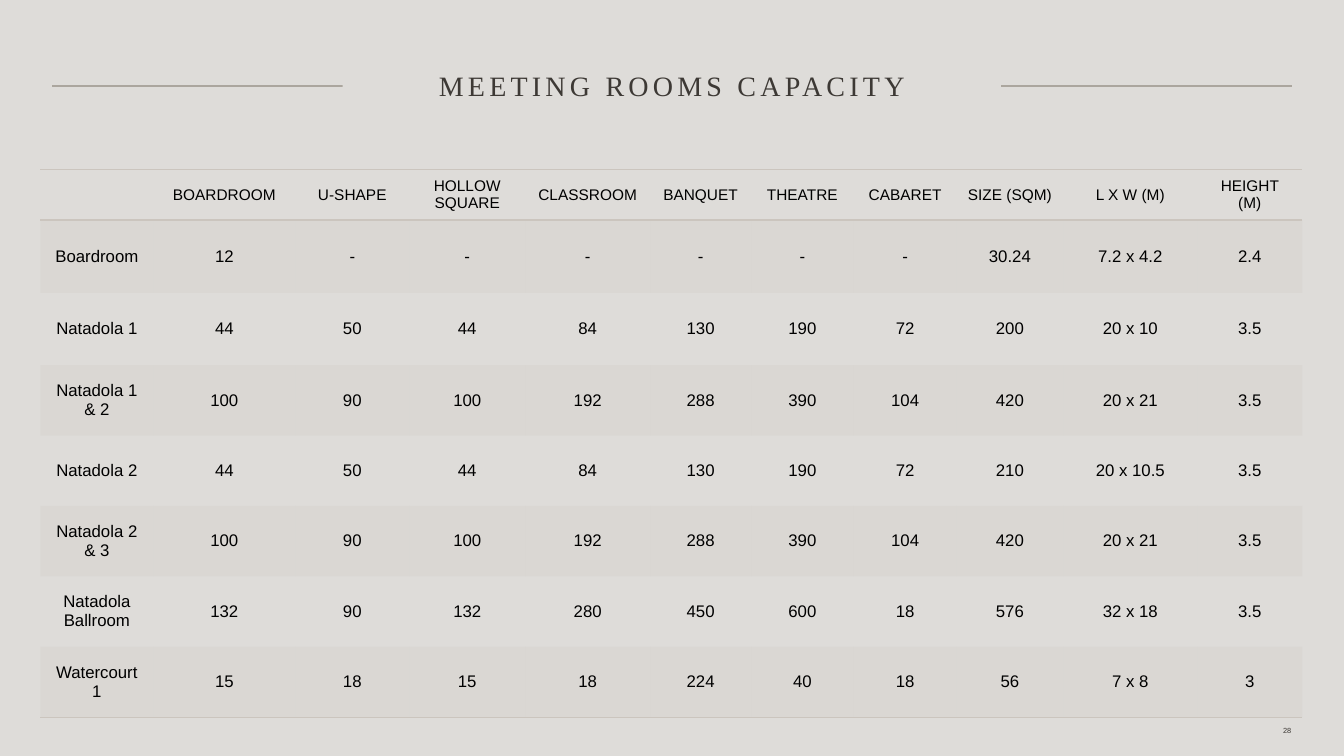
from lxml import etree
from pptx import Presentation
from pptx.dml.color import RGBColor
from pptx.enum import shapes, text
from pptx.oxml import ns
from pptx.util import Pt

BACKGROUND, INK, RULE, SAND = "DEDCD9", "3D3935", "ABA69E", "CBC5BE"
NO_STYLE = "{2D5ABB26-0587-4C30-8999-92F81FD0307C}"


def paint(target, color):
    """Give a fill or line fill one solid colour."""
    target.solid()
    target.fore_color.rgb = RGBColor.from_string(color)


def write(frame, content, size, color="000000", font="Arial",
          align=text.PP_ALIGN.CENTER, spacing=0):
    paragraph = frame.paragraphs[0]
    paragraph.alignment = align
    run = paragraph.add_run()
    run.text = content
    run.font.name, run.font.size = font, Pt(size)
    paint(run.font.fill, color)
    if spacing:
        run.font._element.set("spc", str(spacing * 100))


presentation = Presentation()
presentation.slide_width, presentation.slide_height = Pt(960), Pt(540)
slide = presentation.slides.add_slide(presentation.slide_layouts[6])
paint(slide.background.fill, BACKGROUND)

# Rule across the header, interrupted by the title box
rule = slide.shapes.add_connector(
    shapes.MSO_CONNECTOR.STRAIGHT, Pt(37.5), Pt(61.2), Pt(923), Pt(61.2))
paint(rule.line.fill, RULE)
rule.line.width = Pt(1.25)
etree.SubElement(rule._element.spPr, ns.qn("a:effectLst"))

# Title
title = slide.shapes.add_textbox(Pt(244.8), Pt(45.4), Pt(470.2), Pt(31.7))
paint(title.fill, BACKGROUND)
title.text_frame.word_wrap = False
title.text_frame.vertical_anchor = text.MSO_ANCHOR.MIDDLE
write(title.text_frame, "MEETING ROOMS CAPACITY", 20, INK,
      font="Times New Roman", spacing=3)

# Page number
number = slide.shapes.add_textbox(Pt(698.4), Pt(511.9), Pt(224), Pt(15.8))
frame = number.text_frame
frame.word_wrap = True
frame.margin_left = frame.margin_right = frame.margin_bottom = 0
frame.margin_top = Pt(7.2)
write(frame, "28", 5.3, INK, align=text.PP_ALIGN.RIGHT)

# Capacity table
rows = [
    ["", "BOARDROOM", "U-SHAPE", "HOLLOW SQUARE", "CLASSROOM", "BANQUET",
     "THEATRE", "CABARET", "SIZE (SQM)", "L X W (M)", "HEIGHT (M)"],
    ["Boardroom", "12", "-", "-", "-", "-", "-", "-", "30.24", "7.2 x 4.2", "2.4"],
    ["Natadola 1", "44", "50", "44", "84", "130", "190", "72", "200", "20 x 10", "3.5"],
    ["Natadola 1 & 2", "100", "90", "100", "192", "288", "390", "104", "420",
     "20 x 21", "3.5"],
    ["Natadola 2", "44", "50", "44", "84", "130", "190", "72", "210", "20 x 10.5", "3.5"],
    ["Natadola 2 & 3", "100", "90", "100", "192", "288", "390", "104", "420",
     "20 x 21", "3.5"],
    ["Natadola Ballroom", "132", "90", "132", "280", "450", "600", "18", "576",
     "32 x 18", "3.5"],
    ["Watercourt 1", "15", "18", "15", "18", "224", "40", "18", "56", "7 x 8", "3"],
]
widths = [80.6, 101.5, 81.4, 82.8, 89.3, 72, 73.4, 73.4, 76.3, 95.8, 74.9]
heights = [36, 52, 51.6] + [50.3] * 5
table_frame = slide.shapes.add_table(
    len(rows), len(widths), Pt(28.9), Pt(121.2), Pt(sum(widths)), Pt(sum(heights)))
table = table_frame.table
table.horz_banding = False
table_frame._element.find(".//" + ns.qn("a:tableStyleId")).text = NO_STYLE
for column, width in zip(table.columns, widths):
    column.width = Pt(width)
for row, height in zip(table.rows, heights):
    row.height = Pt(height)

last = len(rows) - 1
for row_index, row in enumerate(rows):
    edges = {0: ["a:lnT", "a:lnB"], last: ["a:lnB"]}.get(row_index, [])
    for column_index, value in enumerate(row):
        cell = table.cell(row_index, column_index)
        cell.vertical_anchor = text.MSO_ANCHOR.MIDDLE
        if value:
            write(cell.text_frame, value, 12 if row_index else 11)

        # Borders come before the fill in the cell properties
        properties = cell._tc.get_or_add_tcPr()
        for edge in edges:
            border = etree.SubElement(properties, ns.qn(edge), w=str(Pt(1)))
            solid = etree.SubElement(border, ns.qn("a:solidFill"))
            etree.SubElement(solid, ns.qn("a:srgbClr"), val=SAND)

        # Every second row carries a translucent band
        if row_index % 2:
            paint(cell.fill, SAND)
            band = properties.find(ns.qn("a:solidFill") + "/" + ns.qn("a:srgbClr"))
            etree.SubElement(band, ns.qn("a:alpha"), val="20000")
        else:
            cell.fill.background()

presentation.save("out.pptx")
